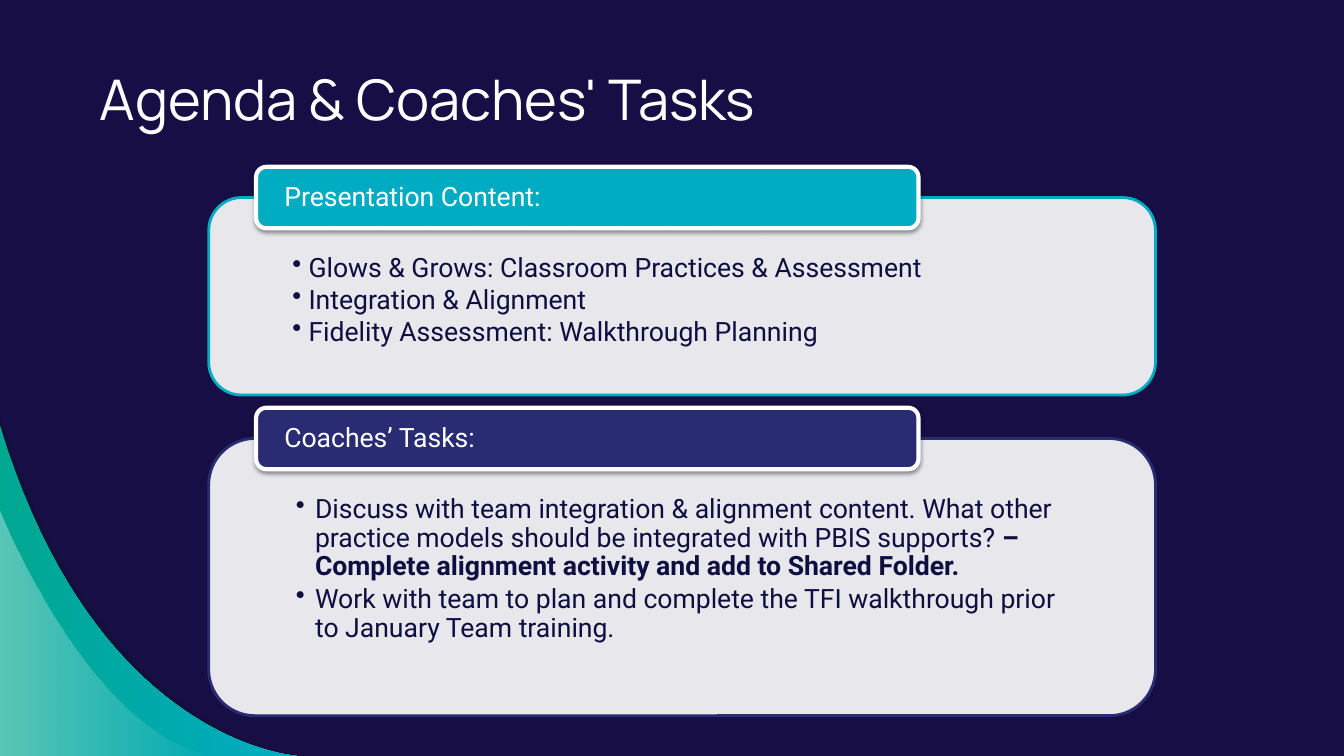
from lxml import etree
from pptx import Presentation
from pptx.dml.color import RGBColor
from pptx.enum.shapes import MSO_SHAPE
from pptx.enum.text import MSO_ANCHOR
from pptx.oxml.ns import qn
from pptx.util import Inches, Pt

ROUNDED = MSO_SHAPE.ROUNDED_RECTANGLE
TOP = MSO_ANCHOR.TOP
MIDDLE = MSO_ANCHOR.MIDDLE

NIGHT = RGBColor(0x16, 0x0E, 0x44)
SHADE = RGBColor(0x12, 0x10, 0x2F)
GREEN = RGBColor(0x00, 0xA7, 0x91)
TEAL = RGBColor(0x00, 0xAC, 0xC2)
INDIGO = RGBColor(0x29, 0x2C, 0x73)
INK = RGBColor(0x0D, 0x0F, 0x41)
WHITE = RGBColor(0xFF, 0xFF, 0xFF)

SLIDE_W, SLIDE_H = 13.33, 7.5
TITLE = "Agenda & Coaches' Tasks"

SECTIONS = [
    {
        "heading": "Presentation Content:",
        "color": TEAL,
        "top": 1.96,
        "height": 1.96,
        "body_inset": 0.1,
        "indent": 0.16,
        "line_spacing": 1.0,
        "space_after": 0,
        "items": [
            [("Glows & Grows: Classroom Practices & Assessment", False)],
            [("Integration & Alignment", False)],
            [("Fidelity Assessment: Walkthrough Planning", False)],
        ],
    },
    {
        "heading": "Coaches’ Tasks:",
        "color": INDIGO,
        "top": 4.35,
        "height": 2.75,
        "body_inset": 0.135,
        "indent": 0.19,
        "line_spacing": 0.9,
        "space_after": 2.85,
        "items": [
            [
                ("Discuss with team integration & alignment content. What other "
                 "practice models should be integrated with PBIS supports? ", False),
                ("– Complete alignment activity and add to Shared Folder.", True),
            ],
            [("Work with team to plan and complete the TFI walkthrough prior "
              "to January Team training.", False)],
        ],
    },
]

SWOOSHES = [
    {"curve": [(0, 4.13), (0.98, 7.39), (3.03, 7.5), (3.03, 7.5)],
     "colors": [SHADE], "opacities": [54]},
    {"curve": [(0, 4.22), (0.95, 7.39), (2.95, 7.5), (2.95, 7.5)],
     "colors": [GREEN, TEAL], "opacities": [100, 100]},
    {"curve": [(0, 5.06), (0, 5.06), (0.91, 7.35), (2.16, 7.5)],
     "colors": [WHITE, WHITE], "opacities": [36, 0]},
]
CURVE_STEPS = 40

CARD_LEFT, CARD_W = 2.07, 9.39
HEADING_LEFT, HEADING_W, HEADING_H = 2.54, 6.57, 0.61
HEADING_RISE = 0.305
HEADING_INSET = 0.03

presentation = Presentation()
presentation.slide_width = Inches(SLIDE_W)
presentation.slide_height = Inches(SLIDE_H)
slide = presentation.slides.add_slide(presentation.slide_layouts[6])
slide.background.fill.solid()
slide.background.fill.fore_color.rgb = NIGHT


def set_opacity(color_element, percent):
    alpha = etree.SubElement(color_element, qn("a:alpha"))
    alpha.set("val", str(percent * 1000))


def fill_shape(shape, colors, opacities):
    if len(colors) == 1:
        shape.fill.solid()
        shape.fill.fore_color.rgb = colors[0]
    else:
        shape.fill.gradient()
        shape.fill.gradient_angle = 0
        for stop, color in zip(shape.fill.gradient_stops, colors):
            stop.color.rgb = color
    color_elements = list(shape._element.spPr.iter(qn("a:srgbClr")))
    for element, percent in zip(color_elements, opacities):
        if percent < 100:
            set_opacity(element, percent)


def curve_point(curve, t):
    weights = ((1 - t) ** 3, 3 * t * (1 - t) ** 2, 3 * t ** 2 * (1 - t), t ** 3)
    return tuple(Inches(sum(w * p[axis] for w, p in zip(weights, curve)))
                 for axis in (0, 1))


def add_swoosh(curve, colors, opacities):
    points = [curve_point(curve, step / CURVE_STEPS) for step in range(CURVE_STEPS + 1)]
    builder = slide.shapes.build_freeform(*points[0])
    builder.add_line_segments(points[1:] + [(0, Inches(SLIDE_H))], close=True)
    swoosh = builder.convert_to_shape()
    swoosh.shadow.inherit = False
    fill_shape(swoosh, colors, opacities)
    swoosh.line.fill.background()


def add_panel(left, top, width, height, color, opacity, line_color, line_width, corner):
    panel = slide.shapes.add_shape(
        ROUNDED, Inches(left), Inches(top), Inches(width), Inches(height))
    panel.adjustments[0] = corner
    panel.shadow.inherit = False
    fill_shape(panel, [color], [opacity])
    panel.line.color.rgb = line_color
    panel.line.width = Pt(line_width)
    return panel


def add_drop_shadow(panel):
    effects = panel._element.spPr.find(qn("a:effectLst"))
    shadow = etree.SubElement(effects, qn("a:outerShdw"), blurRad=str(Pt(3.1)),
                              dist=str(Pt(1.6)), dir="5400000", rotWithShape="0")
    set_opacity(etree.SubElement(shadow, qn("a:srgbClr"), val="000000"), 38)


def add_text(paragraphs, left, top, width, height, *, font, size, color, insets,
             anchor=TOP, line_spacing=1.0, space_after=0, indent=0):
    box = slide.shapes.add_textbox(
        Inches(left), Inches(top), Inches(width), Inches(height))
    frame = box.text_frame
    frame.word_wrap = True
    frame.vertical_anchor = anchor
    (frame.margin_left, frame.margin_top,
     frame.margin_right, frame.margin_bottom) = map(Inches, insets)
    for index, runs in enumerate(paragraphs):
        paragraph = frame.add_paragraph() if index else frame.paragraphs[0]
        paragraph.line_spacing = line_spacing
        paragraph.space_after = Pt(space_after)
        if indent:
            properties = paragraph._p.get_or_add_pPr()
            properties.set("marL", str(Inches(indent)))
            properties.set("indent", str(-Inches(indent)))
            etree.SubElement(properties, qn("a:buChar"), char="•")
        for text, bold in runs:
            run = paragraph.add_run()
            run.text = text
            run.font.name = font
            run.font.size = Pt(size)
            run.font.bold = bold
            run.font.color.rgb = color


def add_section(section):
    top, height, inset = section["top"], section["height"], section["body_inset"]
    add_panel(CARD_LEFT, top, CARD_W, height, WHITE, 90, section["color"], 2, 0.1667)
    add_text(section["items"], CARD_LEFT + inset, top + inset,
             CARD_W - 2 * inset, height - 2 * inset,
             font="Roboto", size=19, color=INK, insets=(0.73, 0.43, 0.73, 0.15),
             line_spacing=section["line_spacing"], space_after=section["space_after"],
             indent=section["indent"])
    heading_top = top - HEADING_RISE
    heading = add_panel(HEADING_LEFT, heading_top, HEADING_W, HEADING_H,
                        section["color"], 100, WHITE, 3, 0.1667)
    add_drop_shadow(heading)
    add_text([[(section["heading"], False)]],
             HEADING_LEFT + HEADING_INSET, heading_top + HEADING_INSET,
             HEADING_W - 2 * HEADING_INSET, HEADING_H - 2 * HEADING_INSET,
             font="Roboto", size=19, color=WHITE, insets=(0.25, 0, 0.25, 0),
             anchor=MIDDLE, line_spacing=0.9)


for swoosh_spec in SWOOSHES:
    add_swoosh(**swoosh_spec)
for section in SECTIONS:
    add_section(section)
add_text([[(TITLE, False)]], 0.89, 0.51, 10.26, 0.92, font="Manrope", size=40,
         color=WHITE, insets=(0.1, 0.1, 0.1, 0.1), anchor=MIDDLE)

presentation.save("out.pptx")
